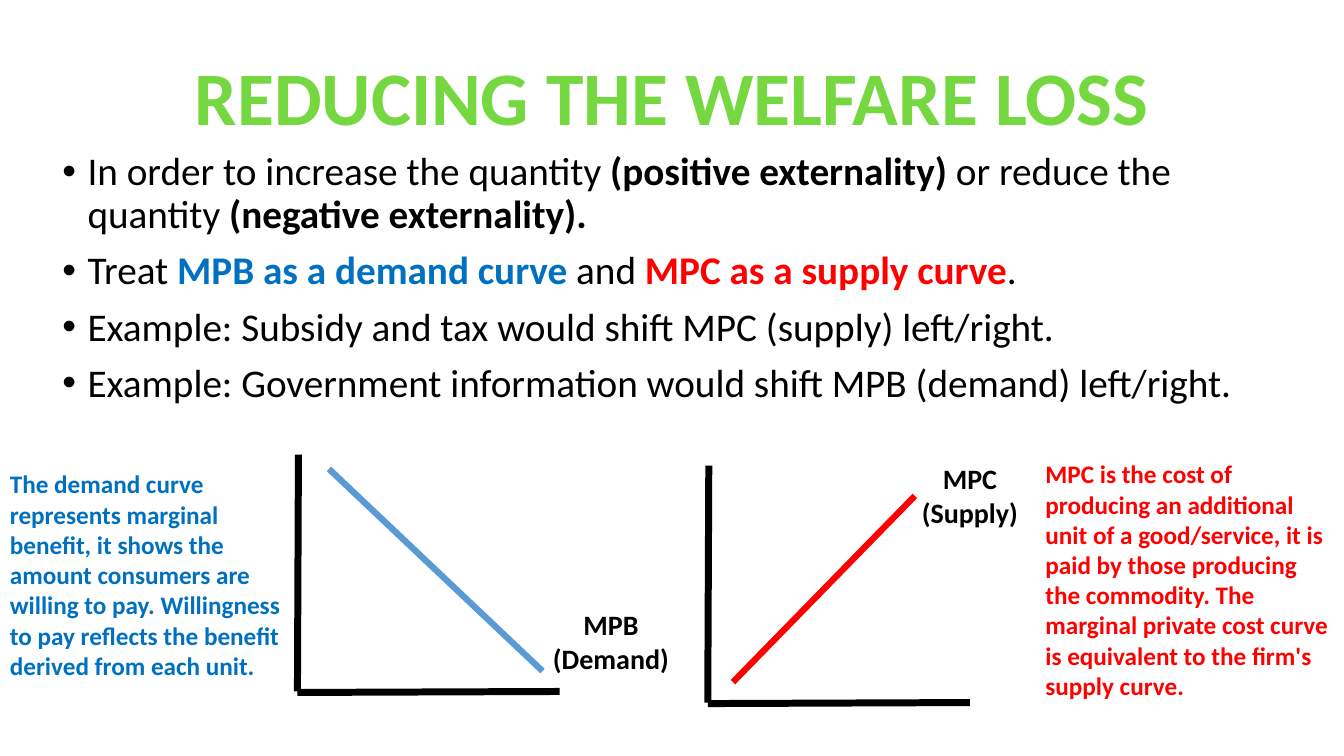
from dataclasses import dataclass

from lxml import etree
from pptx import Presentation
from pptx.dml.color import RGBColor
from pptx.enum.shapes import MSO_CONNECTOR
from pptx.enum.text import MSO_AUTO_SIZE, PP_ALIGN
from pptx.oxml.ns import qn
from pptx.util import Inches, Pt

STRAIGHT = MSO_CONNECTOR.STRAIGHT
LEFT, CENTER = PP_ALIGN.LEFT, PP_ALIGN.CENTER
GROW, FIXED = MSO_AUTO_SIZE.SHAPE_TO_FIT_TEXT, MSO_AUTO_SIZE.NONE


@dataclass(frozen=True)
class Theme:
    font: str = "Calibri"
    title: str = "75D840"
    ink: str = "000000"
    demand: str = "0070C0"
    supply: str = "FF0000"
    demand_line: str = "5B9BD5"
    title_size: int = 54
    body_size: int = 28
    label_size: int = 20
    note_size: int = 18
    curve_width: float = 4.5
    axis_width: float = 5


T = Theme()
SLIDE_W, SLIDE_H = 13.33, 7.5
GRAPH_W, GRAPH_H = 2.6, 2.36
SLANT = 0.01
INDENT = 0.25

TITLE = ("REDUCING THE WELFARE LOSS", (1.56, 0.45, 10.21, 1.01))
BODY_BOX = (0.52, 1.46, 12.25, 4.76)
BULLETS = [
    [("In order to increase the quantity ", T.ink, False),
     ("(positive externality)", T.ink, True),
     (" or reduce the quantity ", T.ink, False),
     ("(negative externality).", T.ink, True)],
    [("Treat ", T.ink, False),
     ("MPB as a demand curve ", T.demand, True),
     ("and ", T.ink, False),
     ("MPC as a supply curve", T.supply, True),
     (".", T.ink, False)],
    [("Example: Subsidy and tax would shift MPC (supply) left/right.", T.ink, False)],
    [("Example: Government information would shift MPB (demand) left/right.", T.ink, False)],
]
GRAPHS = [
    {"corner": (2.95, 4.51),
     "curve": ((0.12, 0.06), (0.935, 0.91)), "line": T.demand_line,
     "label": "MPB\n(Demand)", "label_box": (5.38, 5.98, 1.36, 0.77),
     "note": "The demand curve represents marginal benefit, it shows the amount "
             "consumers are willing to pay. Willingness to pay reflects the benefit "
             "derived from each unit.",
     "note_box": (0, 4.6, 2.96, 2.22), "color": T.demand},
    {"corner": (7.02, 4.62),
     "curve": ((0.79, 0.127), (0.096, 0.91)), "line": T.supply,
     "label": "MPC\n(Supply)", "label_box": (9.04, 4.53, 1.16, 0.77),
     "note": "MPC is the cost of producing an additional unit of a good/service, "
             "it is paid by those producing the commodity. The marginal private cost "
             "curve is equivalent to the firm's supply curve.",
     "note_box": (10.27, 4.5, 3.02, 2.52), "color": T.supply},
]


def style(r, size, color, bold):
    r.font.name = T.font
    r.font.size = Pt(size)
    r.font.bold = bold
    r.font.color.rgb = RGBColor.from_string(color)


def add_frame(s, box, wrap=True, fit=GROW):
    tf = s.shapes.add_textbox(*map(Inches, box)).text_frame
    tf.word_wrap = wrap
    tf.auto_size = fit
    return tf


def add_text(s, text, box, size, color, align=LEFT, wrap=True):
    p = add_frame(s, box, wrap).paragraphs[0]
    p.text = text
    p.alignment = align
    for r in p.runs:
        style(r, size, color, True)


def add_bullets(s):
    tf = add_frame(s, BODY_BOX, fit=FIXED)
    for i, parts in enumerate(BULLETS):
        p = tf.add_paragraph() if i else tf.paragraphs[0]
        p.line_spacing = 0.9
        p.space_before = Pt(10)
        pPr = p._p.get_or_add_pPr()
        pPr.set("marL", str(Inches(INDENT)))
        pPr.set("indent", str(-Inches(INDENT)))
        etree.SubElement(pPr, qn("a:buFont")).set("typeface", "Arial")
        etree.SubElement(pPr, qn("a:buChar")).set("char", "•")
        for text, color, bold in parts:
            r = p.add_run()
            r.text = text
            style(r, T.body_size, color, bold)


def add_line(s, start, end, color, width):
    c = s.shapes.add_connector(STRAIGHT, *map(Inches, (*start, *end)))
    c.line.color.rgb = RGBColor.from_string(color)
    c.line.width = Pt(width)
    etree.SubElement(c._element.spPr, qn("a:effectLst"))


def add_graph(s, g):
    x, y = g["corner"]
    base = y + GRAPH_H
    start, end = [(x + GRAPH_W * u, y + GRAPH_H * v) for u, v in g["curve"]]
    add_line(s, start, end, g["line"], T.curve_width)
    add_text(s, g["label"], g["label_box"], T.label_size, T.ink, CENTER, False)
    add_line(s, (x + SLANT, y), (x, base - SLANT), T.ink, T.axis_width)
    add_line(s, (x + GRAPH_W, base - SLANT), (x, base), T.ink, T.axis_width)
    add_text(s, g["note"], g["note_box"], T.note_size, g["color"])


def main():
    prs = Presentation()
    prs.slide_width, prs.slide_height = Inches(SLIDE_W), Inches(SLIDE_H)
    s = prs.slides.add_slide(prs.slide_layouts[6])
    add_bullets(s)
    add_text(s, *TITLE, T.title_size, T.title, CENTER)
    for g in GRAPHS:
        add_graph(s, g)
    prs.save("out.pptx")


if __name__ == "__main__":
    main()
